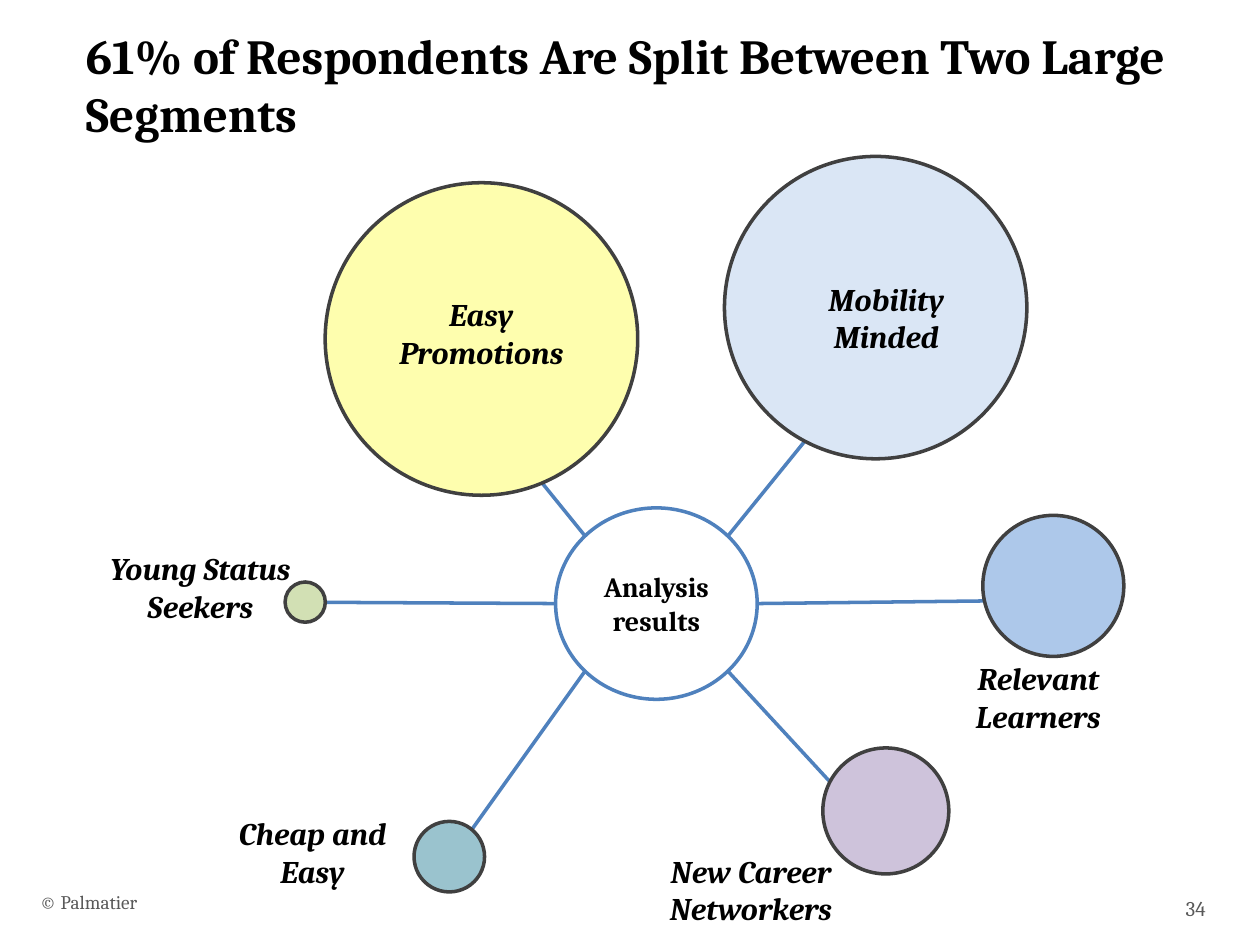
from lxml import etree
from pptx import Presentation
from pptx.dml.color import RGBColor
from pptx.enum import shapes, text
from pptx.oxml import ns
from pptx.util import Pt


def paint(color_format, value, opacity=100):
    color_format.rgb = RGBColor.from_string(value)
    return opacity


def write(shape, lines, size, color="000000", bold=False, italic=False,
          align=text.PP_ALIGN.CENTER, wrap=True):
    frame = shape.text_frame
    frame.text = "\n".join(lines)
    frame.word_wrap = wrap
    for paragraph in frame.paragraphs:
        paragraph.alignment = align
        paragraph.font.name = "Cambria"
        paragraph.font.size = Pt(size)
        paragraph.font.bold = bold
        paragraph.font.italic = italic
        paint(paragraph.font.color, color)


deck = Presentation()
deck.slide_width, deck.slide_height = Pt(720), Pt(540)
page = deck.slides.add_slide(deck.slide_layouts[5])

title = page.shapes.title
title.left, title.top, title.width, title.height = Pt(41.8), Pt(18), Pt(648), Pt(60)
write(title, ["61% of Respondents Are Split Between Two Large Segments"], 28,
      bold=True, align=text.PP_ALIGN.LEFT)
title.text_frame.vertical_anchor = text.MSO_ANCHOR.MIDDLE
title.text_frame.auto_size = text.MSO_AUTO_SIZE.NONE

spokes = [
    ((416.2, 383.8), (474.5, 447)),
    ((416.2, 306), (460, 252)),
    ((317.5, 344.9), (185.8, 344.2)),
    ((334.1, 383.8), (269.3, 474.5)),
    ((334.1, 306), (309.6, 275.8)),
    ((432.7, 344.9), (563, 343.4)),
]
for start, end in spokes:
    spoke = page.shapes.add_connector(
        shapes.MSO_CONNECTOR.STRAIGHT, *[Pt(value) for value in start + end])
    paint(spoke.line.color, "4F81BD")
    spoke.line.width = Pt(2)
    etree.SubElement(spoke._element.spPr, ns.qn("a:effectLst"))

circles = [
    (317.5, 290.2, 115.2, 109.4, "FFFFFF", 100, "4F81BD"),
    (561.6, 294.5, 80.6, 80.6, "558ED5", 48, "404040"),
    (470.2, 427.4, 72, 72, "B3A2C7", 64, "404040"),
    (185.8, 104.4, 178.6, 178.6, "FCFC0C", 33, "404040"),
    (236.6, 469.4, 40.3, 40.3, "31859C", 49, "404040"),
    (162.9, 332.6, 23, 23, "C3D69B", 74, "404040"),
    (414, 89.4, 172.8, 172.8, "8EB4E3", 32, "404040"),
]
for left, top, width, height, fill, opacity, outline in circles:
    circle = page.shapes.add_shape(
        shapes.MSO_SHAPE.OVAL, Pt(left), Pt(top), Pt(width), Pt(height))
    circle.shadow.inherit = False
    circle.fill.solid()
    paint(circle.fill.fore_color, fill)
    if opacity < 100:
        color = circle._element.spPr.find(ns.qn("a:solidFill"))[0]
        etree.SubElement(color, ns.qn("a:alpha"), val=str(opacity * 1000))
    paint(circle.line.color, outline)
    circle.line.width = Pt(2)
    if outline == "4F81BD":
        write(circle, ["Analysis results"], 16, bold=True)
        circle.text_frame.vertical_anchor = text.MSO_ANCHOR.MIDDLE

labels = [
    (54.7, 310.3, 119.5, ["Young Status", "Seekers"]),
    (374.4, 483.1, 109.4, ["New Career", "Networkers"]),
    (549.4, 373.3, 87.8, ["Relevant", "Learners"]),
    (444.2, 156.2, 124.6, ["Mobility Minded"]),
    (220.3, 164.9, 109.4, ["Easy", "Promotions"]),
    (113.8, 461.5, 129.6, ["Cheap and Easy"]),
]
for left, top, width, lines in labels:
    box = page.shapes.add_textbox(Pt(left), Pt(top), Pt(width), Pt(51))
    write(box, lines, 18, bold=True, italic=True, wrap=len(lines) == 1)

footer = page.shapes.add_textbox(Pt(15.8), Pt(505.4), Pt(482.4), Pt(28.8))
write(footer, ["© Palmatier"], 11, "595959", align=text.PP_ALIGN.LEFT)

number = page.shapes.add_textbox(Pt(658.1), Pt(508.3), Pt(50.4), Pt(21.6))
write(number, ["34"], 12, "595959")
number.text_frame.vertical_anchor = text.MSO_ANCHOR.MIDDLE

deck.save("out.pptx")
